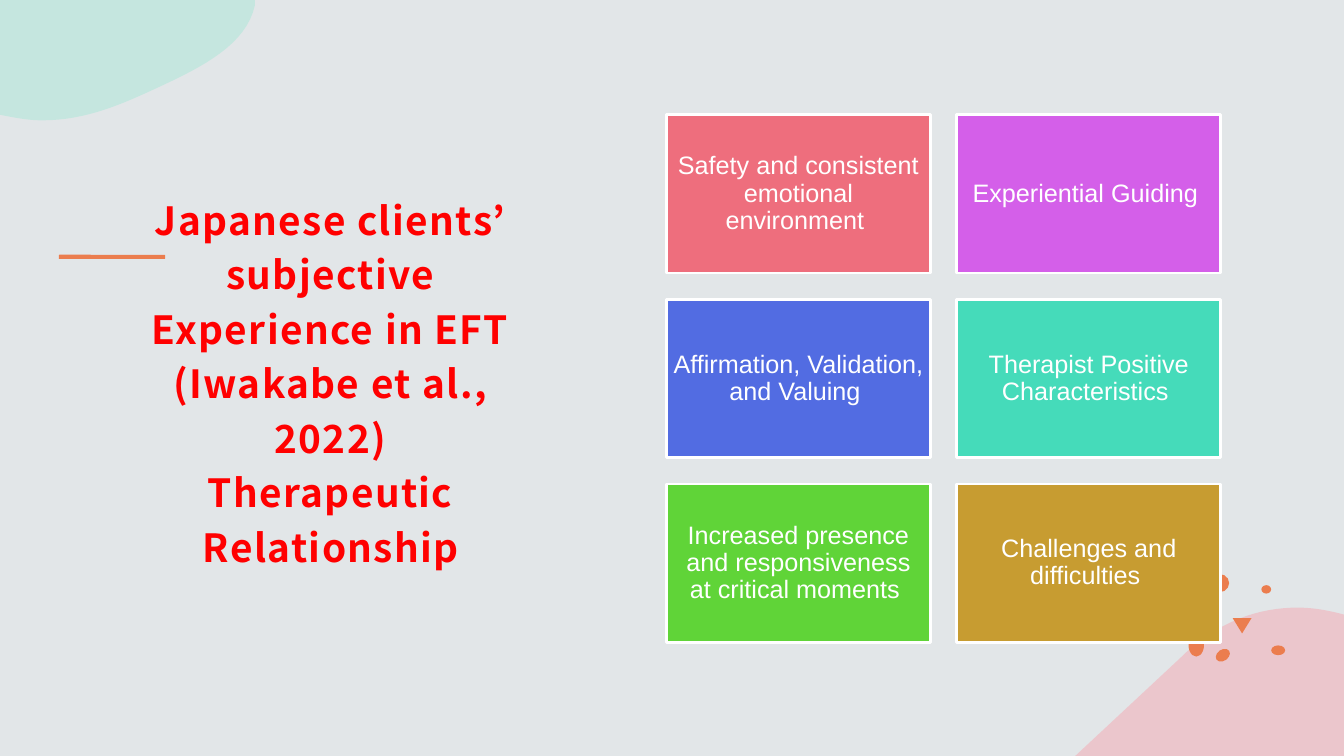
"""Build a slide of six themes in the therapeutic relationship."""
from dataclasses import dataclass

import pptx
import pptx.dml.color
import pptx.enum.shapes
import pptx.enum.text
import pptx.oxml
import pptx.oxml.ns
import pptx.util
from pptx.util import Pt

MSO_SHAPE = pptx.enum.shapes.MSO_SHAPE


@dataclass(frozen=True)
class Theme:
    """Colours, fonts and type sizes."""
    background: str = "E2E6E8"
    pink: str = "F5A8B1"
    mint: str = "AAE6D8"
    orange: str = "EB7D4E"
    title: str = "FF0000"
    white: str = "FFFFFF"
    title_font: str = "Noto Sans CJK JP"
    title_size: float = 27.7
    card_font: str = "Arial"
    card_size: float = 18


@dataclass(frozen=True)
class Blob:
    """Half-transparent outline of line ends (2 numbers) and cubic curves (6)."""
    color: str
    start: tuple
    segments: list


@dataclass(frozen=True)
class Mark:
    """Small orange brush mark."""
    left: float
    top: float
    width: float
    height: float
    kind: MSO_SHAPE = MSO_SHAPE.OVAL
    rotation: float = 0


@dataclass(frozen=True)
class Card:
    """Coloured theme card."""
    label: str
    color: str


THEME = Theme()
WIDTH, HEIGHT = 960, 540
BLOBS = [
    Blob(THEME.pink, (WIDTH, HEIGHT), [
        (768, HEIGHT), (842, 471), (870, 443, 900, 434, 927, 434),
        (938, 434, 949, 436, WIDTH, 439)]),
    Blob(THEME.mint, (0, 0), [
        (182, 0), (182, 4), (176, 32, 144, 48, 114, 62),
        (88, 74, 62, 86, 30, 86), (20, 86, 10, 84, 0, 82)]),
]
MARKS = [
    Mark(868, 464, 11, 8, rotation=-35),
    Mark(849, 453, 11, 16),
    Mark(908, 461, 10, 7),
    Mark(864, 410, 14, 13),
    Mark(901, 418, 7, 6),
    Mark(880.5, 441.5, 13.5, 11, MSO_SHAPE.FLOWCHART_MERGE),
    Mark(42, 182, 76, 3, MSO_SHAPE.ROUNDED_RECTANGLE),
]
TITLE = ("Japanese clients’ subjective Experience in EFT (Iwakabe et al., 2022)\v"
         "Therapeutic Relationship")
CARDS = [
    Card("Safety and consistent emotional environment ", "EE6E7D"),
    Card("Experiential Guiding ", "D45FE9"),
    Card("Affirmation, Validation, and Valuing ", "526CE2"),
    Card("Therapist Positive Characteristics ", "45DBBA"),
    Card("Increased presence and responsiveness at critical moments ", "60D438"),
    Card("Challenges and difficulties ", "C79C31"),
]
COLUMNS = 2
GRID_LEFT, GRID_TOP = 476, 82.1
CARD_WIDTH, CARD_HEIGHT, GAP = 188.6, 113, 18.8
CURVE_STEPS = 16


def rgb(color: str) -> pptx.dml.color.RGBColor:
    """Return the colour for a hex string."""
    return pptx.dml.color.RGBColor.from_string(color)


def paint(s, color: str) -> None:
    """Give a shape a flat fill without border or shadow."""
    s.shadow.inherit = False
    s.fill.solid()
    s.fill.fore_color.rgb = rgb(color)
    s.line.fill.background()


def trace(blob: Blob) -> list:
    """Return the points along a blob, with its curves sampled evenly."""
    points = [blob.start]
    for segment in blob.segments:
        if len(segment) == 2:
            points.append(segment)
            continue
        x0, y0 = points[-1]
        x1, y1, x2, y2, x3, y3 = segment
        for step in range(1, CURVE_STEPS + 1):
            t = step / CURVE_STEPS
            u = 1 - t
            a, b, c, d = u ** 3, 3 * t * u ** 2, 3 * t ** 2 * u, t ** 3
            points.append((a * x0 + b * x1 + c * x2 + d * x3,
                           a * y0 + b * y1 + c * y2 + d * y3))
    return points


def draw_blob(shapes, blob: Blob) -> None:
    """Draw a half-transparent blob."""
    first, *rest = [(Pt(x), Pt(y)) for x, y in trace(blob)]
    builder = shapes.build_freeform(*first)
    builder.add_line_segments(rest, close=True)
    s = builder.convert_to_shape()
    paint(s, blob.color)
    color = s._element.spPr.find(".//" + pptx.oxml.ns.qn("a:srgbClr"))
    color.append(pptx.oxml.parse_xml(
        f'<a:alpha {pptx.oxml.ns.nsdecls("a")} val="50000"/>'))


def draw_mark(shapes, mark: Mark) -> None:
    """Draw a brush mark."""
    s = shapes.add_shape(mark.kind, Pt(mark.left), Pt(mark.top),
                         Pt(mark.width), Pt(mark.height))
    s.rotation = mark.rotation
    paint(s, THEME.orange)


def set_text(s, text: str, font: str, size: float, color: str, spacing: float, inset: float):
    """Write centred text in a shape and return its paragraph."""
    tf = s.text_frame
    tf.word_wrap = True
    tf.vertical_anchor = pptx.enum.text.MSO_ANCHOR.MIDDLE
    tf.margin_left = tf.margin_right = tf.margin_top = tf.margin_bottom = Pt(inset)
    p = tf.paragraphs[0]
    p.text = text
    p.alignment = pptx.enum.text.PP_ALIGN.CENTER
    p.line_spacing = spacing
    p.font.name = font
    p.font.size = Pt(size)
    p.font.color.rgb = rgb(color)
    return p


def draw_title(shapes) -> None:
    """Draw the slide title."""
    s = shapes.add_textbox(Pt(98.6), Pt(105.8), Pt(275.8), Pt(329))
    p = set_text(s, TITLE, THEME.title_font, THEME.title_size, THEME.title, 1.17, 8.6)
    s.text_frame.margin_bottom = Pt(7.2)
    p.font.bold = True
    p._p.pPr.find(pptx.oxml.ns.qn("a:defRPr")).set("spc", "100")


def draw_card(shapes, card: Card, row: int, column: int) -> None:
    """Draw a card at its place in the grid."""
    left = GRID_LEFT + column * (CARD_WIDTH + GAP)
    top = GRID_TOP + row * (CARD_HEIGHT + GAP)
    s = shapes.add_shape(MSO_SHAPE.RECTANGLE,
                         Pt(left), Pt(top), Pt(CARD_WIDTH), Pt(CARD_HEIGHT))
    paint(s, card.color)
    s.line.color.rgb = rgb(THEME.white)
    s.line.width = Pt(2)
    set_text(s, card.label, THEME.card_font, THEME.card_size, THEME.white, 0.9, 5)


def main() -> None:
    """Build and save the slide."""
    prs = pptx.Presentation()
    prs.slide_width, prs.slide_height = Pt(WIDTH), Pt(HEIGHT)
    slide = prs.slides.add_slide(prs.slide_layouts[6])
    slide.background.fill.solid()
    slide.background.fill.fore_color.rgb = rgb(THEME.background)
    for blob in BLOBS:
        draw_blob(slide.shapes, blob)
    for mark in MARKS:
        draw_mark(slide.shapes, mark)
    draw_title(slide.shapes)
    for i, card in enumerate(CARDS):
        draw_card(slide.shapes, card, *divmod(i, COLUMNS))
    prs.save("out.pptx")


if __name__ == "__main__":
    main()
